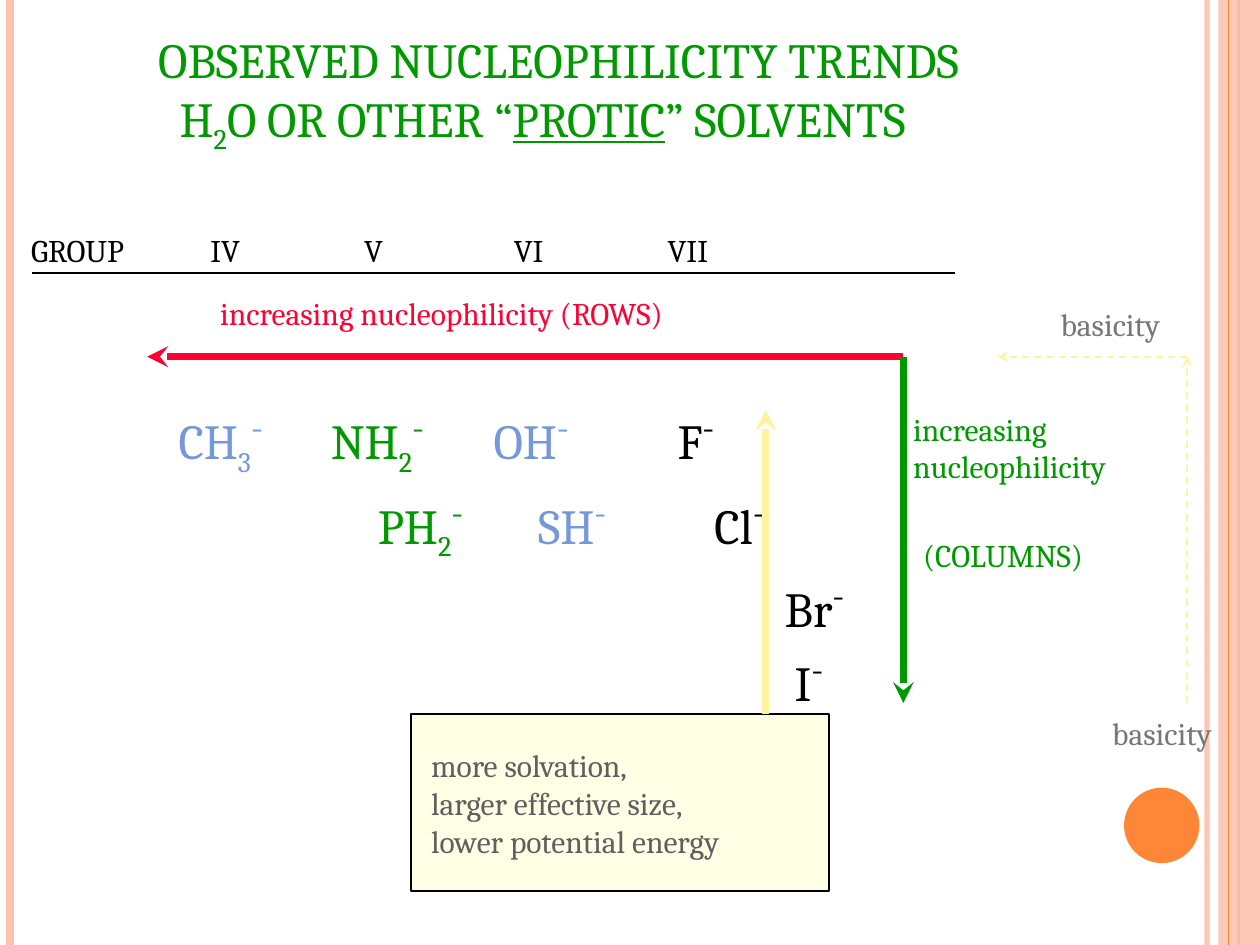
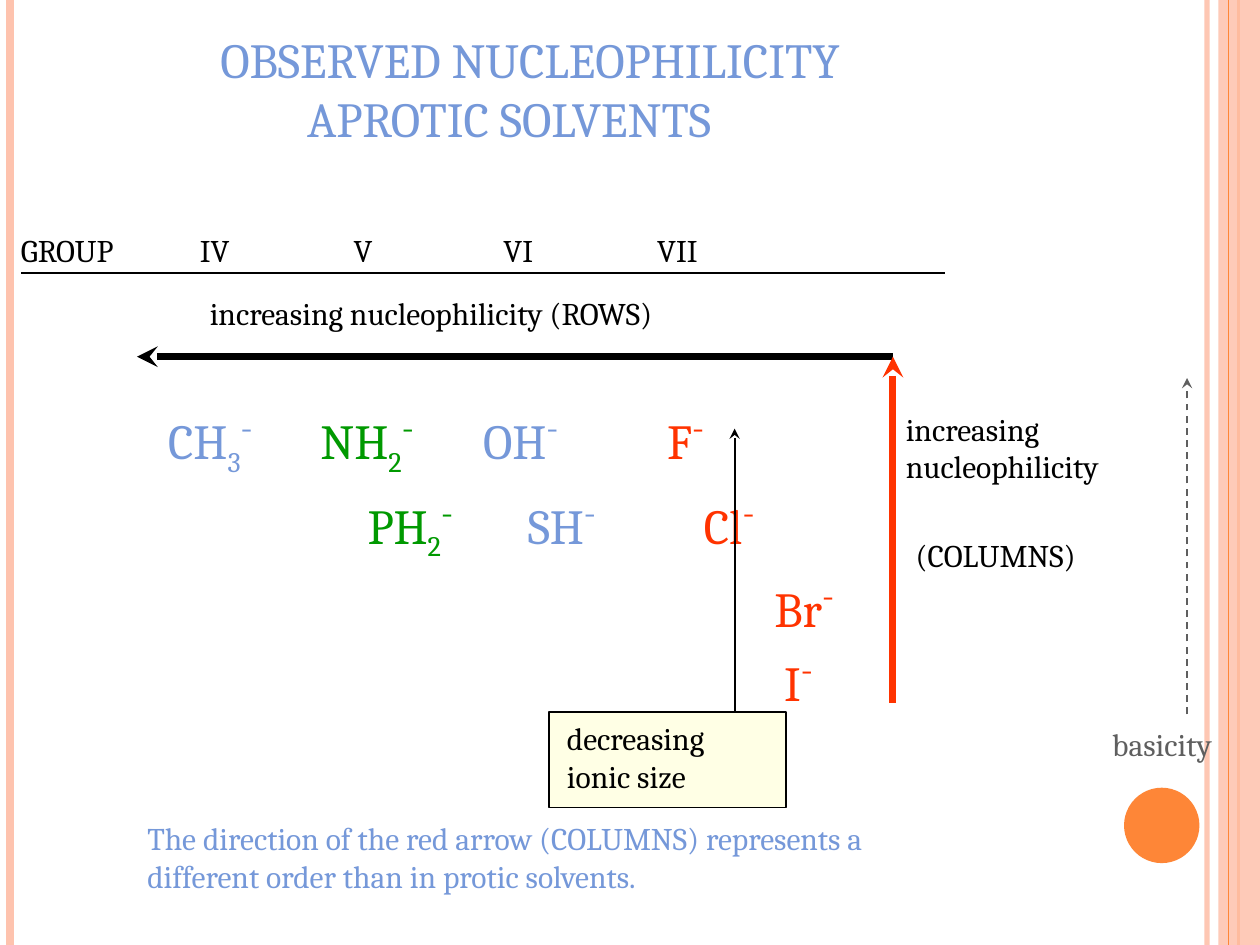
from lxml.etree import SubElement
from pptx import Presentation
from pptx.dml.color import RGBColor
from pptx.enum.dml import MSO_LINE
from pptx.enum.shapes import MSO_CONNECTOR, MSO_SHAPE
from pptx.enum.text import MSO_ANCHOR, MSO_AUTO_SIZE, PP_ALIGN
from pptx.oxml.ns import qn
from pptx.util import Cm, Pt

FONT = "Cambria"
BLACK = RGBColor(0x00, 0x00, 0x00)
GREEN = RGBColor(0x00, 0x99, 0x00)
BLUE = RGBColor(0x75, 0x98, 0xD9)
CRIMSON = RGBColor(0xFF, 0x00, 0x33)
RED = RGBColor(0xFF, 0x33, 0x00)
YELLOW = RGBColor(0xFF, 0xF3, 0x9D)
CREAM = RGBColor(0xFF, 0xFF, 0xCC)
GREY = RGBColor(0x77, 0x77, 0x77)
DARK_GREY = RGBColor(0x5F, 0x5F, 0x5F)
PEACH = RGBColor(0xFE, 0xC3, 0xAE)
ORANGE = RGBColor(0xFE, 0x86, 0x37)

WIDTH, HEIGHT = 25.4, 19.05
AXIS_TOP, AXIS_BOTTOM = 7.19, 14.17
BASICITY_X = 23.93


def set_alpha(element, percent):
    for color in element.iter(qn("a:srgbClr")):
        SubElement(color, qn("a:alpha"), val=str(percent * 1000))


def write_text(tf, paragraphs, size=18, color=BLACK, tabs=(), indents=(),
               margins=(0.25, 0.13), anchor=MSO_ANCHOR.TOP):
    tf.word_wrap = True
    tf.auto_size = MSO_AUTO_SIZE.NONE
    tf.vertical_anchor = anchor
    tf.margin_left, tf.margin_top = (Cm(m) for m in margins)
    tf.margin_right, tf.margin_bottom = Cm(0.25), Cm(0.13)
    for i, runs in enumerate(paragraphs):
        p = tf.paragraphs[0] if i == 0 else tf.add_paragraph()
        p.alignment = PP_ALIGN.LEFT
        pPr = p._p.get_or_add_pPr()
        if indents:
            pPr.set("marL", str(Cm(indents[i])))
            pPr.set("indent", "0")
        if tabs:
            tab_list = SubElement(pPr, qn("a:tabLst"))
            for tab in tabs:
                SubElement(tab_list, qn("a:tab"), pos=str(Cm(tab)), algn="l")
        for run in [(runs, {})] if isinstance(runs, str) else runs:
            text, style = run
            r = p.add_run()
            r.text = text
            r.font.name = FONT
            r.font.size = Pt(style.get("size", size))
            r.font.color.rgb = style.get("color", color)
            if "underline" in style:
                r.font.underline = style["underline"]
            if "base" in style:
                r._r.get_or_add_rPr().set("baseline", str(style["base"] * 1000))


def add_text(s, x, y, w, h, *paragraphs, **style):
    sp = s.shapes.add_textbox(Cm(x), Cm(y), Cm(w), Cm(h))
    write_text(sp.text_frame, paragraphs, **style)


def set_title(s, x, w, *paragraphs, **style):
    sp = s.shapes.title
    sp.left, sp.top, sp.width, sp.height = Cm(x), Cm(0.46), Cm(w), Cm(2.62)
    write_text(sp.text_frame, paragraphs, size=28, **style)


def add_line(s, x1, y1, x2, y2, color, width, arrow=False, dashed=False, alpha=None):
    line = s.shapes.add_connector(MSO_CONNECTOR.STRAIGHT, Cm(x1), Cm(y1), Cm(x2), Cm(y2))
    line.line.color.rgb = color
    line.line.width = Pt(width)
    if dashed:
        line.line.dash_style = MSO_LINE.DASH
    spPr = line._element.spPr
    if alpha:
        set_alpha(spPr, alpha)
    if arrow:
        SubElement(line.line._get_or_add_ln(), qn("a:tailEnd"), type="stealth")
    SubElement(spPr, qn("a:effectLst"))


def add_shape(s, kind, x, y, w, h, fill, alpha=None, outline=None):
    sp = s.shapes.add_shape(kind, Cm(x), Cm(y), Cm(w), Cm(h))
    sp.shadow.inherit = False
    sp.fill.solid()
    sp.fill.fore_color.rgb = fill
    if alpha:
        set_alpha(sp._element.spPr, alpha)
    if outline is None:
        sp.line.fill.background()
    else:
        sp.line.color.rgb = outline
        sp.line.width = Pt(1)
    return sp


def add_callout(s, x, y, w, h, *paragraphs, **style):
    sp = add_shape(s, MSO_SHAPE.RECTANGLE, x, y, w, h, CREAM, 50, BLACK)
    write_text(sp.text_frame, paragraphs, **style)


def add_side_bands(s):
    add_line(s, 24.33, 0, 24.33, HEIGHT, PEACH, 3, alpha=93)
    add_line(s, 0.2, 0, 0.2, HEIGHT, PEACH, 4.5)
    add_line(s, 24.97, 0, 24.97, HEIGHT, ORANGE, 1.5)
    add_shape(s, MSO_SHAPE.RECTANGLE, 24.56, 0, WIDTH - 24.56, HEIGHT, PEACH, 87)
    add_line(s, 24.77, 0, 24.77, HEIGHT, ORANGE, 0.75)
    add_shape(s, MSO_SHAPE.OVAL, 22.66, 15.88, 1.52, 1.52, ORANGE)


def ion(symbol, color, count=""):
    runs = [(symbol, {"color": color})]
    if count:
        runs.append((count, {"color": color, "base": -25}))
    return runs + [("-", {"color": color, "size": 36, "base": 30})]


def ion_row(*ions):
    runs = list(ions[0])
    for other in ions[1:]:
        runs += [("\t", {})] + other
    return runs


def add_group_header(s, shift):
    add_line(s, 0.64 + shift, 5.51, 19.26 + shift, 5.51, BLACK, 1)
    add_text(s, 0.38 + shift, 4.52, 3.15, 1.09, "GROUP")
    add_text(s, 3.99 + shift, 4.52, 13.03, 1.09, "IV\tV\tVI\tVII", tabs=(3.1, 6.12, 9.22))


def add_ions(s, shift, halide):
    first = ion_row(ion("CH", BLUE, "3"), ion("NH", GREEN, "2"), ion("OH", BLUE), ion("F", halide))
    second = ion_row(ion("PH", GREEN, "2"), ion("SH", BLUE), ion("Cl", halide))
    add_text(s, 3.35 + shift, 7.87, 13.69, 1.45, first, size=28, tabs=(3.07, 6.35, 10.06))
    add_text(s, 7.37 + shift, 9.58, 10.11, 1.45, second, size=28, tabs=(3.23, 6.78))
    add_text(s, 15.57 + shift, 11.25, 1.93, 1.45, ion("Br", halide), size=28)
    add_text(s, 15.77 + shift, 12.75, 1.93, 1.45, ion("I", halide), size=28)


def add_trend_arrows(s, shift, row_color, column_color, upward):
    corner = 18.21 + shift
    add_line(s, corner, AXIS_TOP, 2.97 + shift, AXIS_TOP, row_color, 4, arrow=True)
    start, end = (AXIS_BOTTOM, AXIS_TOP) if upward else (AXIS_TOP, AXIS_BOTTOM)
    add_line(s, corner, start, corner, end, column_color, 4, arrow=True)


def add_trend_labels(s, shift, column_left, row_color, column_color):
    add_text(s, 4.19 + shift, 5.79, 12.34, 1.09,
             "increasing nucleophilicity (ROWS)", color=row_color)
    add_text(s, column_left, 8.13, 5.51, 1.96,
             "increasing", "nucleophilicity", color=column_color)
    add_text(s, column_left + 0.2, 10.67, 4.65, 1.09, "(COLUMNS)", color=column_color)


def add_basicity_label(s, x, y, color):
    add_text(s, x, y, 3.2, 1.09, "basicity", color=color)


def new_slide(prs):
    s = prs.slides.add_slide(prs.slide_layouts[5])
    add_side_bands(s)
    return s


def add_protic_slide(prs):
    s = new_slide(prs)
    set_title(s, 2.72, 20.4, "OBSERVED NUCLEOPHILICITY TRENDS",
              [("H", {}), ("2", {"base": -25}), ("O OR OTHER “", {}),
               ("PROTIC", {"underline": True}), ("” SOLVENTS", {})],
              color=GREEN, indents=(0.22, 0.65))
    add_callout(s, 8.28, 14.4, 8.43, 3.56, "more solvation,", "larger effective size,",
                "lower potential energy", color=DARK_GREY, margins=(0.41, 0.64))
    add_group_header(s, 0)
    add_ions(s, 0, BLACK)
    add_trend_arrows(s, 0, CRIMSON, GREEN, upward=False)
    add_trend_labels(s, 0, 18.16, CRIMSON, GREEN)
    add_line(s, 15.44, 14.4, 15.44, 8.26, YELLOW, 4, arrow=True)
    add_line(s, BASICITY_X, AXIS_BOTTOM, BASICITY_X, AXIS_TOP, YELLOW, 1, arrow=True, dashed=True)
    add_line(s, BASICITY_X, AXIS_TOP, 20.12, AXIS_TOP, YELLOW, 1, arrow=True, dashed=True)
    add_basicity_label(s, 22.17, 14.27, GREY)
    add_basicity_label(s, 21.13, 6.02, GREY)


def add_aprotic_slide(prs):
    s = new_slide(prs)
    shift = -0.21
    set_title(s, 4.19, 15.77, "OBSERVED NUCLEOPHILICITY", "APROTIC SOLVENTS",
              color=BLUE, indents=(0, 1.75))
    add_callout(s, 11.07, 14.35, 4.78, 1.93, "decreasing", "ionic size", margins=(0.36, 0.15))
    add_group_header(s, shift)
    add_ions(s, shift, RED)
    add_trend_arrows(s, shift, BLACK, RED, upward=True)
    add_trend_labels(s, shift, 18.01, BLACK, BLACK)
    add_text(s, 2.72, 16.38, 19.38, 1.96,
             "The direction of the red arrow (COLUMNS) represents a",
             "different order than in protic solvents.", color=BLUE)
    add_line(s, 14.81, 14.35, 14.81, 8.64, BLACK, 1, arrow=True)
    add_line(s, BASICITY_X, 14.4, BASICITY_X, 7.62, DARK_GREY, 1, arrow=True, dashed=True)
    add_basicity_label(s, 22.17, 14.48, DARK_GREY)


def main():
    prs = Presentation()
    prs.slide_width, prs.slide_height = Cm(WIDTH), Cm(HEIGHT)
    add_protic_slide(prs)
    add_aprotic_slide(prs)
    prs.save("out.pptx")


if __name__ == "__main__":
    main()
